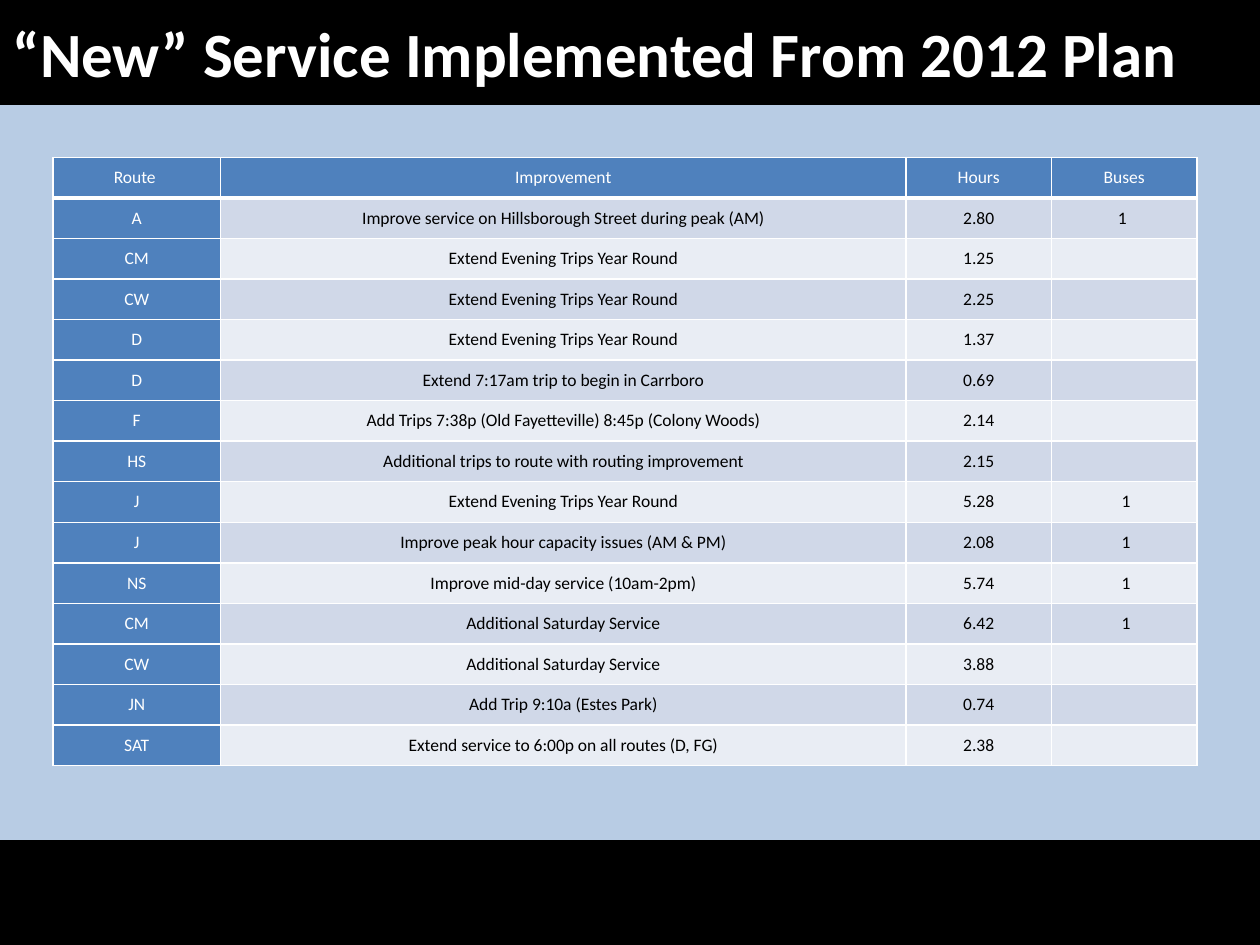
import pptx
import pptx.dml.color
import pptx.enum.shapes
import pptx.enum.text
import pptx.oxml
import pptx.oxml.ns
import pptx.util

Inches = pptx.util.Inches
Pt = pptx.util.Pt
RGBColor = pptx.dml.color.RGBColor
PP_ALIGN = pptx.enum.text.PP_ALIGN
MIDDLE = pptx.enum.text.MSO_ANCHOR.MIDDLE

BLACK = RGBColor(0x00, 0x00, 0x00)
WHITE = RGBColor(0xFF, 0xFF, 0xFF)
BACKGROUND = RGBColor(0xB8, 0xCC, 0xE4)
HEADING = RGBColor(0x4F, 0x81, 0xBD)
BANDS = (RGBColor(0xD0, 0xD8, 0xE8), RGBColor(0xE9, 0xED, 0xF4))

BAR_HEIGHT = 0.83
TABLE_WIDTH = 9.08
ROUTE_WIDTH, IMPROVEMENT_WIDTH = 1.33, 5.44
NUMBER_WIDTH = (TABLE_WIDTH - ROUTE_WIDTH - IMPROVEMENT_WIDTH) / 2
COLUMN_WIDTHS = (ROUTE_WIDTH, IMPROVEMENT_WIDTH, NUMBER_WIDTH, NUMBER_WIDTH)

EVENING = "Extend Evening Trips Year Round"
SATURDAY = "Additional Saturday Service"
ROWS = [
    ("Route ", "Improvement", "Hours", "Buses"),
    ("A", "Improve service on Hillsborough Street during peak (AM)", "2.80", "1 "),
    ("CM", EVENING, "1.25", ""),
    ("CW", EVENING, "2.25", ""),
    ("D", EVENING, "1.37", ""),
    ("D", "Extend 7:17am trip to begin in Carrboro", "0.69", ""),
    ("F", "Add Trips 7:38p (Old Fayetteville) 8:45p (Colony Woods)", "2.14", ""),
    ("HS", "Additional trips to route with routing improvement", "2.15", ""),
    ("J", EVENING, "5.28", " 1"),
    ("J", "Improve peak hour capacity issues (AM & PM)", "2.08", " 1"),
    ("NS", "Improve mid-day service (10am-2pm)", "5.74", " 1"),
    ("CM", SATURDAY, "6.42", " 1"),
    ("CW", SATURDAY, "3.88", ""),
    ("JN", "Add Trip 9:10a (Estes Park)", "0.74", ""),
    ("SAT", "Extend service to 6:00p on all routes (D, FG)", "2.38", ""),
]


class SlideBuilder:
    font = "Calibri"

    def __init__(self, prs):
        self.slide = prs.slides.add_slide(prs.slide_layouts[5])
        fill = self.slide.background.fill
        fill.solid()
        fill.fore_color.rgb = BACKGROUND

    def run(self, p, text, size, color, bold=False):
        r = p.add_run()
        r.text = text
        r.font.name = self.font
        r.font.size = Pt(size)
        r.font.bold = bold
        r.font.color.rgb = color

    def paint(self, sp, color):
        sp.fill.solid()
        sp.fill.fore_color.rgb = color
        sp.line.color.rgb = color
        sp.line.width = Pt(0.75)

    def title(self, text, left, top, width, height):
        sp = self.slide.shapes.title
        sp.left, sp.top = Inches(left), Inches(top)
        sp.width, sp.height = Inches(width), Inches(height)
        self.paint(sp, BLACK)
        tf = sp.text_frame
        tf.auto_size = pptx.enum.text.MSO_AUTO_SIZE.NONE
        tf.vertical_anchor = MIDDLE
        p = tf.paragraphs[0]
        p.alignment = PP_ALIGN.LEFT
        self.run(p, text, 36, WHITE, bold=True)

    def bar(self, left, top, width, height):
        sp = self.slide.shapes.add_shape(
            pptx.enum.shapes.MSO_SHAPE.RECTANGLE,
            Inches(left), Inches(top), Inches(width), Inches(height))
        sp.shadow.inherit = False
        self.paint(sp, BLACK)

    def borders(self, cell, bottom):
        tc_pr = cell._tc.get_or_add_tcPr()
        for side, width in (("L", 1), ("R", 1), ("T", 1), ("B", bottom)):
            tc_pr.append(pptx.oxml.parse_xml(
                f'<a:ln{side} {pptx.oxml.ns.nsdecls("a")} w="{Pt(width)}">'
                f'<a:solidFill><a:srgbClr val="{WHITE}"/></a:solidFill></a:ln{side}>'))

    def cell(self, cell, text, fill, color, bottom):
        cell.margin_left = cell.margin_right = Inches(0.07)
        cell.margin_top = cell.margin_bottom = 0
        cell.vertical_anchor = MIDDLE
        self.borders(cell, bottom)
        cell.fill.solid()
        cell.fill.fore_color.rgb = fill
        if text:
            p = cell.text_frame.paragraphs[0]
            p.alignment = PP_ALIGN.CENTER
            self.run(p, text, 10, color)

    def table(self, rows, widths, left, top, height):
        table = self.slide.shapes.add_table(
            len(rows), len(widths), Inches(left), Inches(top),
            Inches(sum(widths)), Inches(height)).table
        for column, width in zip(table.columns, widths):
            column.width = Inches(width)
        for i, row in enumerate(rows):
            table.rows[i].height = Inches(height / len(rows))
            for j, text in enumerate(row):
                heading = i == 0 or j == 0
                self.cell(table.cell(i, j), text,
                          HEADING if heading else BANDS[(i - 1) % 2],
                          WHITE if heading else BLACK,
                          bottom=3 if i == 0 else 1)


def main():
    prs = pptx.Presentation()
    prs.slide_width, prs.slide_height = Inches(10), Inches(7.5)
    s = SlideBuilder(prs)
    s.bar(0, 7.5 - BAR_HEIGHT, 10, BAR_HEIGHT)
    s.title("“New” Service Implemented From 2012 Plan", 0, 0, 10, BAR_HEIGHT)
    s.table(ROWS, COLUMN_WIDTHS, 0.42, 1.25, 4.83)
    prs.save("out.pptx")


if __name__ == "__main__":
    main()
